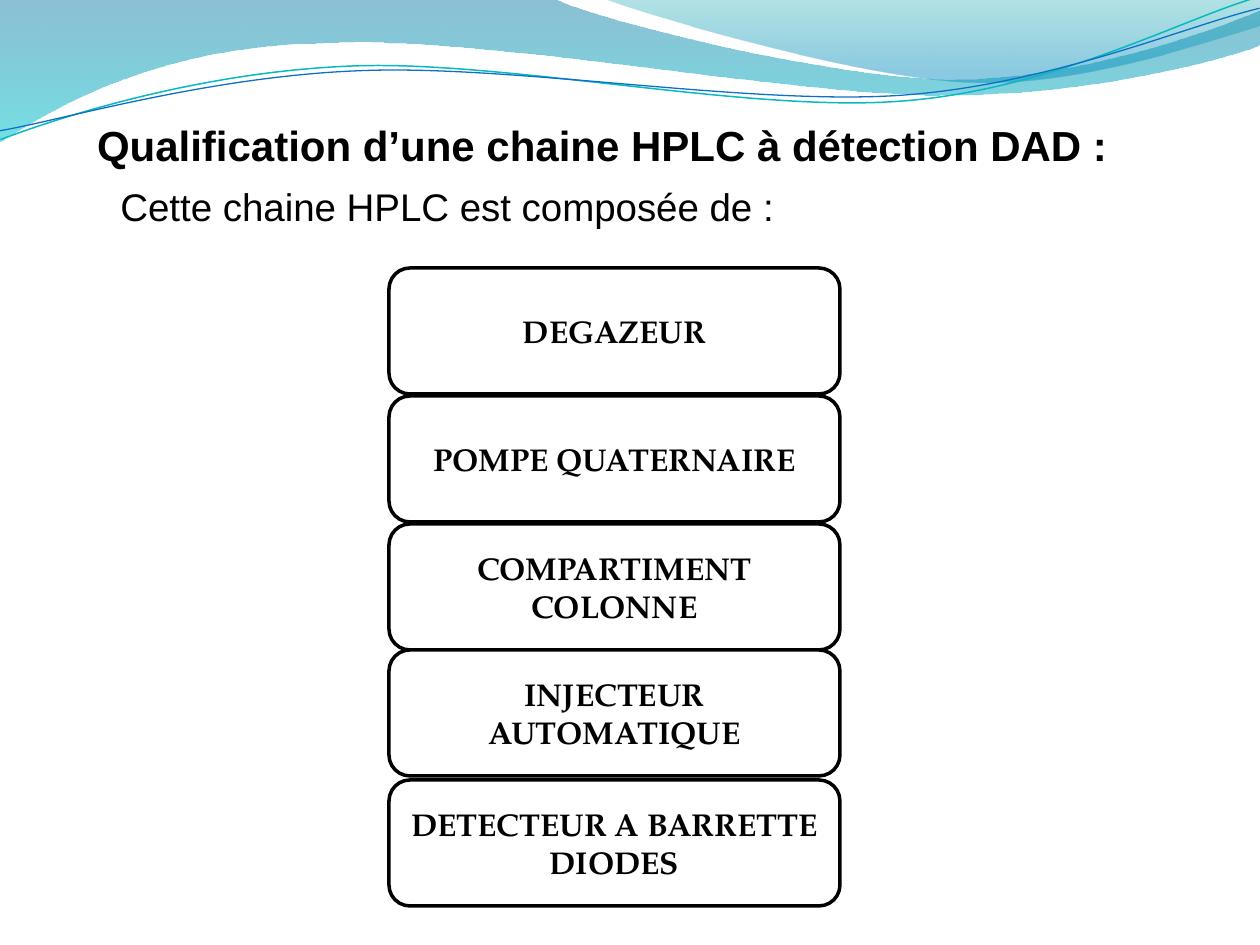
from lxml import etree
from pptx import Presentation
from pptx.dml.color import RGBColor
from pptx.enum.shapes import MSO_SHAPE
from pptx.enum.text import MSO_ANCHOR, PP_ALIGN
from pptx.oxml.ns import qn
from pptx.util import Pt

PX = 914400 / 126
ROUND = MSO_SHAPE.ROUNDED_RECTANGLE
LEFT, CENTER = PP_ALIGN.LEFT, PP_ALIGN.CENTER
TOP, MIDDLE = MSO_ANCHOR.TOP, MSO_ANCHOR.MIDDLE
SANS, SERIF = "Arial", "TeX Gyre Pagella"
TILT = 357.3
COLORS = {
    "ink": "000000", "paper": "FFFFFF",
    "ocean": "0074A1", "aqua": "00C6CF",
    "lagoon": "00A1A9", "sky": "008BBF",
    "teal": "0AB8BF", "blue": "0F6FC6",
}

# Each wave is a start point, then lines (2 numbers) and curves (6 numbers).
BANDS = [
    ([(0, 0), (554, -1), (600, 21, 837, 79, 955, 79),
      (1075, 79, 1207, 33, 1260, 11), (1261, 45),
      (1239, 55, 1096, 96, 940, 95), (784, 95, 481, 35, 324, 43),
      (163, 45, 58, 105, -1, 142)],
     [(0, "ocean", 45), (100, "aqua", 55)]),
    ([(604, -1), (641, 14, 859, 78, 969, 82),
      (1079, 87, 1211, 40, 1260, 26), (1260, 0)],
     [(0, "lagoon", 30), (80, "sky", 45)]),
]
STRANDS = [
    ([(-2, 110), (59, 90, 200, 52, 350, 53), (499, 53, 745, 118, 896, 114),
      (1049, 111, 1184, 45, 1260, 27)], "teal", 0.85),
    ([(-2, 101), (57, 94, 207, 57, 357, 58), (509, 58, 750, 112, 902, 108),
      (1052, 104, 1188, 52, 1262, 38)], "blue", 0.75),
]
# Top of each part within the stack, and its label.
PARTS = [
    (0, "DEGAZEUR"), (128, "POMPE QUATERNAIRE"),
    (256, "COMPARTIMENT COLONNE"), (382, "INJECTEUR AUTOMATIQUE"),
    (512, "DETECTEUR A BARRETTE DIODES"),
]


def emu(*px):
    return [round(n * PX) for n in px]


def rgb(name):
    return RGBColor.from_string(COLORS[name])


def write(shape, words, size, font=SANS, bold=False, align=LEFT,
          anchor=TOP, spacing=None, inset=None):
    frame = shape.text_frame
    frame.word_wrap = True
    frame.vertical_anchor = anchor
    if inset is not None:
        frame.margin_left = emu(inset)[0]
    para = frame.paragraphs[0]
    para.alignment = align
    if spacing:
        para.line_spacing = spacing
    run = para.add_run()
    run.text = words
    run.font.name, run.font.size, run.font.bold = font, Pt(size), bold
    run.font.color.rgb = rgb("ink")


def add_wave(slide, left, top, moves, close):
    """Build a freeform, then merge each curve's three lines into a cubic."""
    points = [emu(left + move[i], top + move[i + 1])
              for move in moves for i in range(0, len(move), 2)]
    pen = slide.shapes.build_freeform(*points[0], scale=1.0)
    pen.add_line_segments(points[1:], close=close)
    wave = pen.convert_to_shape()
    wave.shadow.inherit = False
    lines = iter(list(wave._element.iter(qn("a:lnTo"))))
    for move in moves[1:]:
        first = next(lines)
        if len(move) == 6:
            first.tag = qn("a:cubicBezTo")
            for _ in range(2):
                line = next(lines)
                first.append(line[0])
                line.getparent().remove(line)
    return wave


def shade(shape, stops):
    """Fill from top to bottom; a stop is percent, colour and opacity."""
    shape.fill.gradient()
    shape.fill.gradient_angle = 270
    for stop, (place, name, _) in zip(shape.fill.gradient_stops, stops):
        stop.position = place / 100
        stop.color.rgb = rgb(name)
    tints = shape._element.spPr.iter(qn("a:srgbClr"))
    for tint, (_, _, alpha) in zip(tints, stops):
        etree.SubElement(tint, qn("a:alpha")).set("val", str(alpha * 1000))


def draw_header(slide, left, top):
    for moves, stops in BANDS:
        band = add_wave(slide, left, top, moves, True)
        shade(band, stops)
        band.line.fill.background()
    for moves, name, width in STRANDS:
        strand = add_wave(slide, left, top, moves, False)
        strand.rotation = TILT
        strand.fill.background()
        strand.line.color.rgb = rgb(name)
        strand.line.width = Pt(width)


def draw_title(slide, left, top, width, height):
    box = slide.shapes.add_textbox(*emu(left, top, width, height))
    write(box, "Qualification d’une chaine HPLC à détection DAD :", 24,
          bold=True, anchor=MIDDLE, spacing=1.5, inset=24)


def draw_intro(slide, left, top, width, height):
    box = slide.shapes.add_textbox(*emu(left, top, width, height))
    write(box, "Cette chaine HPLC est composée de :", 22)


def draw_stack(slide, left, top, width, tall):
    for drop, label in PARTS:
        box = slide.shapes.add_shape(ROUND, *emu(left, top + drop, width, tall))
        box.shadow.inherit = False
        box.fill.solid()
        box.fill.fore_color.rgb = rgb("paper")
        box.line.color.rgb = rgb("ink")
        box.line.width = Pt(2)
        write(box, label, 18, font=SERIF, bold=True, align=CENTER,
              anchor=MIDDLE)


def main():
    deck = Presentation()
    deck.slide_width, deck.slide_height = emu(1260, 945)
    slide = deck.slides.add_slide(deck.slide_layouts[6])
    draw_header(slide, 0, 0)
    draw_title(slide, 73, 93, 1128, 79)
    draw_stack(slide, 389, 268, 451, 126)
    draw_intro(slide, 108, 177, 827, 59)
    deck.save("out.pptx")


if __name__ == "__main__":
    main()
